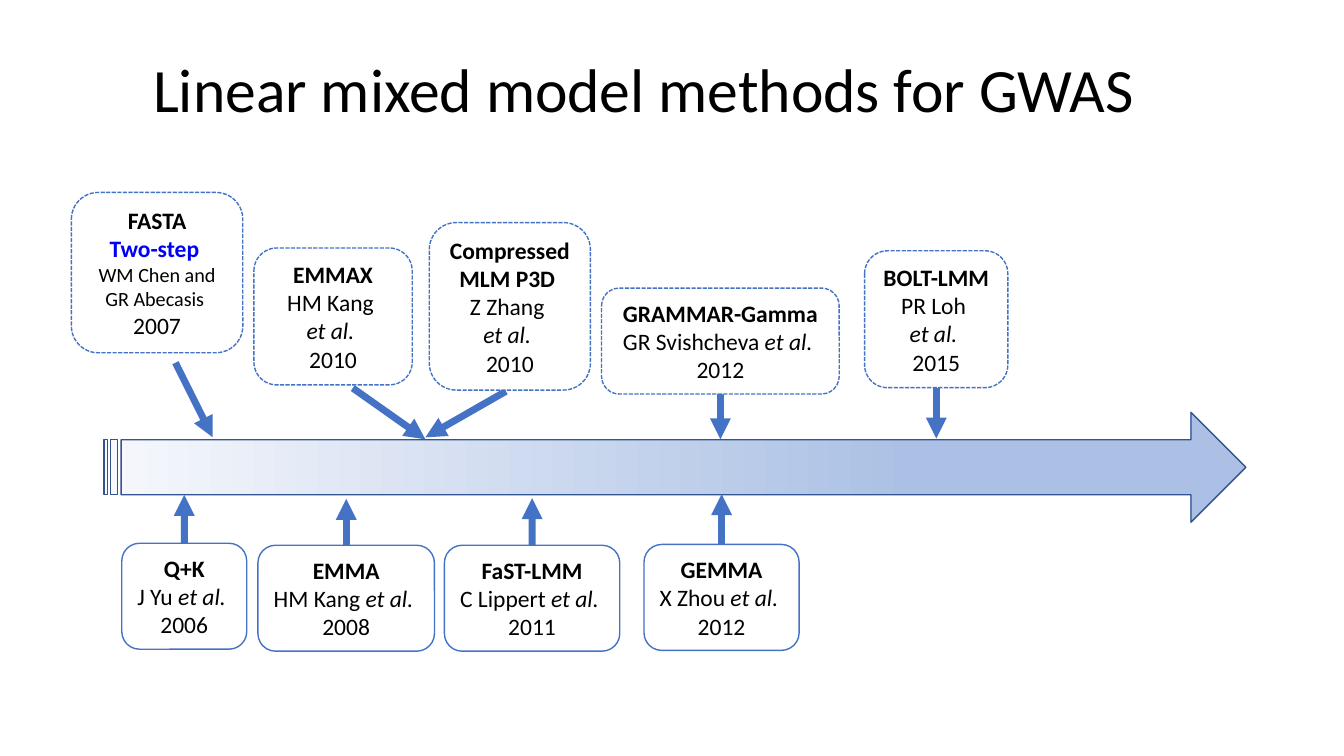
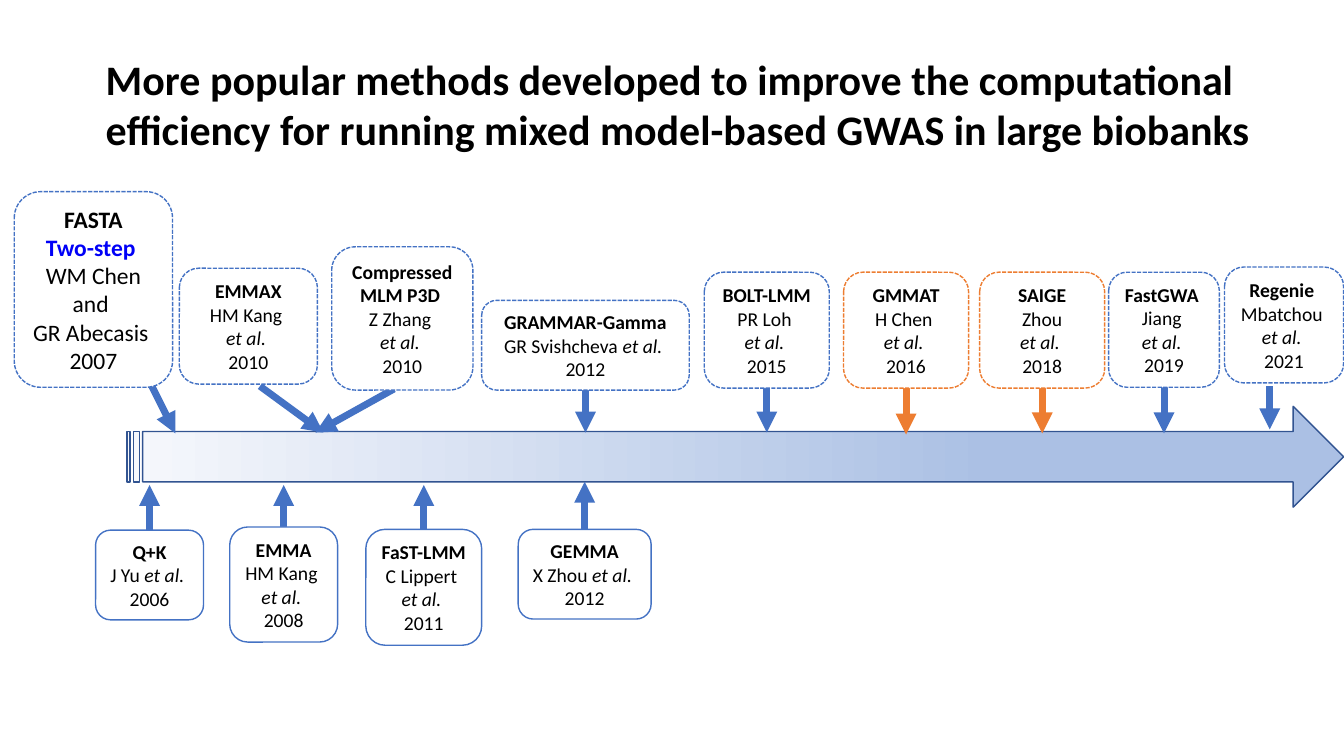
from dataclasses import dataclass
from typing import Optional

from lxml.etree import SubElement
from pptx import Presentation
from pptx.dml.color import RGBColor
from pptx.enum.dml import MSO_LINE_DASH_STYLE as DASH
from pptx.enum.shapes import MSO_CONNECTOR as CONNECTOR, MSO_SHAPE as SHAPE
from pptx.enum.text import MSO_ANCHOR as ANCHOR, MSO_AUTO_SIZE as AUTO_SIZE, PP_ALIGN as ALIGN
from pptx.oxml.ns import qn
from pptx.util import Cm, Pt

COLOURS = {
    "text": "000000",
    "box": "FFFFFF",
    "highlight": "0000F7",
    "blue": "4472C4",
    "orange": "ED7D31",
    "outline": "325491",
    "gradient_start": "F6F8FC",
    "gradient_end": "ABC0E4",
}
FONT = "Calibri"
ET_AL = "et al."
HIGHLIGHTED = "Two-step "


@dataclass
class Method:
    """A published method: its text, box in cm, and the arrow to the timeline."""

    text: str
    box: tuple
    tip_y: float
    tip_x: Optional[float] = None
    tail: Optional[tuple] = None
    colour: str = "blue"
    size: Optional[float] = None
    author_size: Optional[float] = None


OVERVIEW = [
    Method("EMMA\nHM Kang et al. \n2008", (6.5, 13.74, 4.45, 2.67), 12.57),
    Method("Compressed MLM P3D \nZ Zhang \net al. \n2010", (10.82, 5.61, 4.06, 4.22),
           11.02, 10.72, (12.75, 9.86)),
    Method("EMMAX\nHM Kang \net al. \n2010", (6.4, 6.25, 3.99, 3.45), 11.07, 10.72, (8.89, 9.78)),
    Method("FaST-LMM\nC Lippert et al. \n2011", (11.2, 13.74, 4.42, 2.67), 12.55),
    Method("GEMMA\nX Zhou et al. \n2012", (16.23, 13.72, 3.91, 2.67), 12.45),
    Method("GRAMMAR-Gamma\nGR Svishcheva et al. \n2012", (15.16, 7.26, 5.99, 2.67), 11.07),
    Method("BOLT-LMM\nPR Loh \net al. \n2015", (21.79, 6.32, 3.61, 3.45), 11.05),
    Method("Q+K\nJ Yu et al. \n2006", (3.07, 13.69, 3.15, 2.67), 12.47),
    Method("FASTA\nTwo-step \nWM Chen and GR Abecasis \n2007", (1.8, 4.85, 4.32, 4.04),
           11.02, 5.36, (4.42, 9.14), author_size=14.4),
]

BIOBANKS = [
    Method("EMMA\nHM Kang \net al. \n2008", (5.79, 13.28, 2.72, 2.9), 12.22),
    Method("Compressed MLM P3D \nZ Zhang \net al. \n2010", (8.36, 6.22, 3.56, 3.61),
           10.9, 7.95, (9.93, 9.8)),
    Method("EMMAX\nHM Kang \net al. \n2010", (4.52, 6.76, 3.48, 2.92), 10.9, 8.15, (6.55, 9.73)),
    Method("FaST-LMM\nC Lippert \net al. \n2011", (9.22, 13.34, 2.92, 2.92), 12.22),
    Method("GEMMA\nX Zhou et al. \n2012", (13.06, 13.34, 3.35, 2.26), 12.14),
    Method("GRAMMAR-Gamma\nGR Svishcheva et al. \n2012", (12.14, 7.57, 5.23, 2.26), 10.9),
    Method("BOLT-LMM\nPR Loh \net al. \n2015", (17.75, 6.86, 3.15, 2.92), 10.9),
    Method("GMMAT\nH Chen \net al. \n2016", (21.26, 6.86, 3.15, 2.92), 10.95, colour="orange"),
    Method("Q+K\nJ Yu et al. \n2006", (2.41, 13.36, 2.72, 2.26), 12.22),
    Method("SAIGE\nZhou\net al. \n2018", (24.69, 6.86, 3.15, 2.92), 10.92, colour="orange"),
    Method("FASTA\nTwo-step \nWM Chen and \nGR Abecasis \n2007", (0.36, 4.83, 3.99, 4.93),
           10.92, 4.42, (3.48, 9.04), size=16.8),
    Method("FastGWA \nJiang \net al. \n2019", (27.94, 6.86, 2.79, 2.9), 10.92),
    Method("Regenie \nMbatchou \net al. \n2021", (30.86, 6.73, 3, 2.92), 10.82, 32, (32, 9.73)),
]


def rgb(name):
    """Return the named colour."""
    return RGBColor.from_string(COLOURS[name])


def set_font(font, size, colour="text", bold=False):
    """Format a font in the shared typeface."""
    font.name = FONT
    font.size = Pt(size)
    font.bold = bold
    font.color.rgb = rgb(colour)


def add_title(slide, text, box, size, bold=False, align=ALIGN.CENTER,
              anchor=ANCHOR.MIDDLE, spacing=0.9):
    """Place and format the title placeholder."""
    title = slide.shapes.title
    title.left, title.top, title.width, title.height = map(Cm, box)
    frame = title.text_frame
    frame.text = text
    frame.word_wrap = True
    frame.auto_size = AUTO_SIZE.NONE
    frame.vertical_anchor = anchor
    paragraph = frame.paragraphs[0]
    paragraph.alignment = align
    paragraph.line_spacing = spacing
    set_font(paragraph.font, size, bold=bold)


def add_timeline(slide, box):
    """Add the striped arrow that stands for time."""
    arrow = slide.shapes.add_shape(SHAPE.STRIPED_RIGHT_ARROW, *map(Cm, box))
    arrow.shadow.inherit = False
    arrow.fill.gradient()
    arrow.fill.gradient_angle = 0
    stops = zip(arrow.fill.gradient_stops, (0, 0.71), ("gradient_start", "gradient_end"))
    for stop, position, colour in stops:
        stop.position = position
        stop.color.rgb = rgb(colour)
    arrow.line.color.rgb = rgb("outline")
    arrow.line.width = Pt(1)


def add_arrow(slide, start, end, colour):
    """Add a thick straight arrow."""
    arrow = slide.shapes.add_connector(CONNECTOR.STRAIGHT, *map(Cm, (*start, *end)))
    arrow.line.color.rgb = rgb(colour)
    arrow.line.width = Pt(5)
    SubElement(arrow.line._get_or_add_ln(), qn("a:tailEnd"), type="triangle")
    SubElement(arrow._element.spPr, qn("a:effectLst"))
    return arrow


def add_line_of_text(paragraph, text):
    """Write one line with its "et al." in italics."""
    before, et_al, after = text.partition(ET_AL)
    if before:
        paragraph.add_run().text = before
    if et_al:
        run = paragraph.add_run()
        run.text = et_al + after
        run.font.italic = True


def add_box(slide, method, size, above):
    """Add the rounded box that describes a method."""
    box = slide.shapes.add_shape(SHAPE.ROUNDED_RECTANGLE, *map(Cm, method.box))
    box.shadow.inherit = False
    box.fill.solid()
    box.fill.fore_color.rgb = rgb("box")
    box.line.color.rgb = rgb(method.colour)
    box.line.width = Pt(1)
    if above:
        box.line.dash_style = DASH.SQUARE_DOT
    frame = box.text_frame
    frame.word_wrap = above
    frame.vertical_anchor = ANCHOR.MIDDLE
    lines = method.text.split("\n")
    for index, text in enumerate(lines):
        paragraph = frame.paragraphs[0] if index == 0 else frame.add_paragraph()
        paragraph.alignment = ALIGN.CENTER
        add_line_of_text(paragraph, text)
        highlighted = text == HIGHLIGHTED
        heading = index == 0 or highlighted
        is_author = not heading and index < len(lines) - 1
        line_size = method.author_size if is_author and method.author_size else size
        set_font(paragraph.font, line_size, "highlight" if highlighted else "text", heading)
    return box


def add_method(slide, method, size):
    """Add a method box and its arrow to the timeline."""
    left, top, width, height = method.box
    above = top < method.tip_y
    middle = left + width / 2
    start = method.tail or (middle, top + height if above else top)
    end = (method.tip_x or middle, method.tip_y)
    arrow = add_arrow(slide, start, end, method.colour)
    box = add_box(slide, method, method.size or size, above)
    if method.tail is None:
        arrow.begin_connect(box, 2 if above else 0)


def add_history(presentation, timeline, methods, size):
    """Add a title-only slide with a timeline of methods and return it."""
    slide = presentation.slides.add_slide(presentation.slide_layouts[5])
    add_timeline(slide, timeline)
    for method in methods:
        add_method(slide, method, size)
    return slide


def main():
    """Build and save the presentation."""
    presentation = Presentation()
    presentation.slide_width, presentation.slide_height = Cm(33.87), Cm(19.05)

    slide = add_history(presentation, (2.62, 10.39, 28.78, 2.77), OVERVIEW, 16.8)
    add_title(slide, "Linear mixed model methods for GWAS", (1.63, 0.48, 29.21, 3.68), 44)

    slide = add_history(presentation, (3.2, 10.24, 30.66, 2.54), BIOBANKS, 14)
    add_title(slide, "More popular methods developed to improve the computational efficiency "
              "for running mixed model-based GWAS in large biobanks",
              (2.41, 1.22, 31.2, 2.82), 30, bold=True, align=ALIGN.LEFT,
              anchor=ANCHOR.TOP, spacing=1.0)

    presentation.save("out.pptx")


if __name__ == "__main__":
    main()
